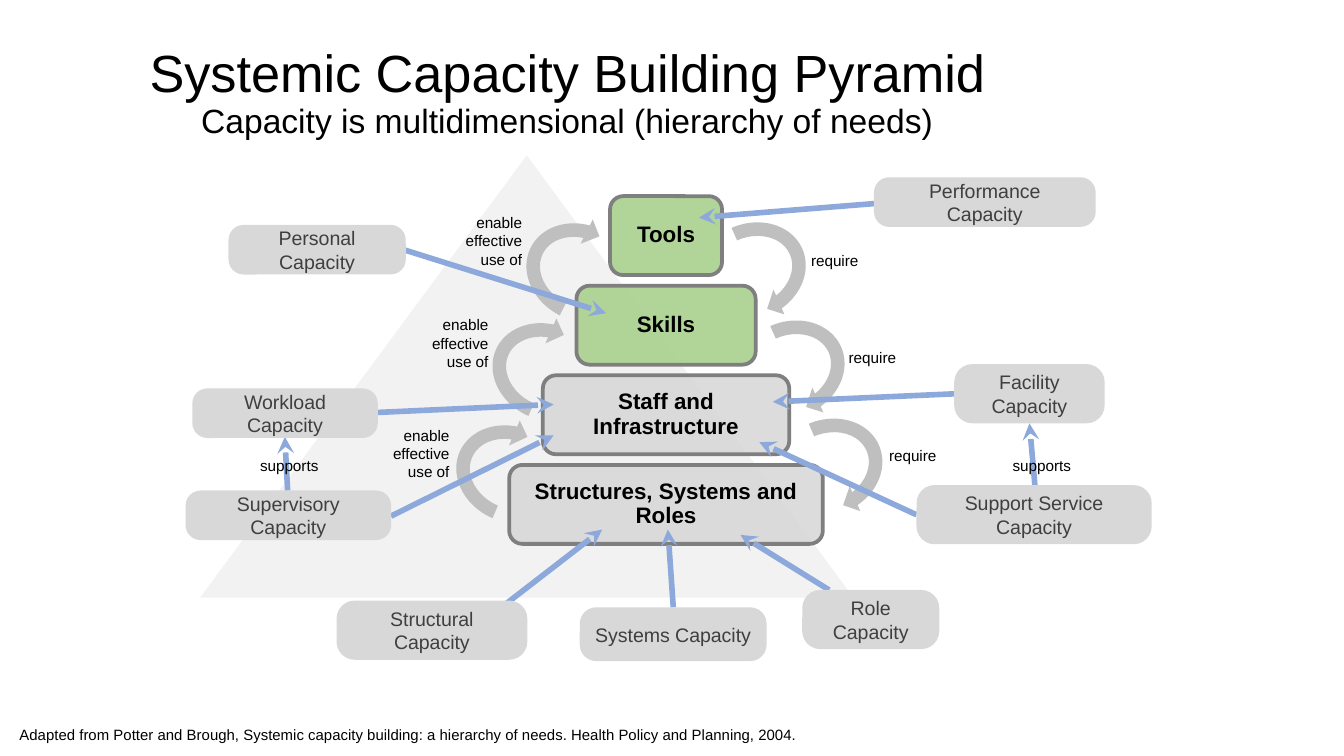
from lxml.etree import SubElement
from pptx import Presentation
from pptx.dml.color import RGBColor
from pptx.enum.shapes import MSO_CONNECTOR as Connector, MSO_SHAPE as Shape
from pptx.enum.text import MSO_ANCHOR as Anchor, PP_ALIGN as Align
from pptx.oxml.ns import qn
from pptx.util import Pt

INK = "000000"
SILVER = "D8D8D8"
GREEN = "A8D08C"

LEVELS = [
    ("Tools", GREEN),
    ("Skills", GREEN),
    ("Staff and Infrastructure", SILVER),
    ("Structures, Systems and Roles", SILVER),
]
LEVEL_CENTRE, LEVEL_TOP, LEVEL_STEP = 356.8, 105.1, 48
LEVEL_WIDTH, LEVEL_GROWTH, LEVEL_HEIGHT = 60, 36, 42.3

CYCLES = [
    (244.8, 220.3, 293.3),
    (264.2, 165.6, 293.7),
    (282.2, 112.3, 296.7),
    (414, 216.7, 67.2),
    (393.8, 164.2, 66.1),
    (373, 111.6, 66.3),
]
ENABLE_LABELS = [(198, 225.4), (218.9, 166.3), (236.9, 111.6)]
REQUIRE_LABELS = [(429.1, 131.8), (449.3, 183.6), (470.9, 236.2)]
SUPPORT_LABELS = [(133.9, 241.9), (537.1, 241.9)]

LINKS = [
    (481.7, 108, 374.4, 116.6),
    (207.4, 131, 324.7, 167.8),
    (511.2, 211, 414, 215.3),
    (491, 275.8, 406.8, 236.9),
    (554.4, 259.9, 551.5, 226.8),
    (201.6, 221, 296.6, 216.7),
    (209.5, 276.5, 296.6, 233.3),
    (154.1, 262.8, 152.6, 234),
    (268.6, 325.4, 322.6, 283.7),
    (360.7, 325.4, 357.8, 283.7),
    (444.2, 316.1, 396.7, 286.6),
]

CAPACITIES = [
    ("Personal Capacity", 122.4, 120.5, 95, 26.6),
    ("Workload Capacity", 103, 208.1, 99.4, 26.6),
    ("Supervisory Capacity", 99.4, 262.8, 110.2, 26.6),
    ("Structural Capacity", 180.3, 321.8, 102.2, 31.7),
    ("Performance Capacity", 468.2, 95, 118.8, 26.6),
    ("Facility Capacity", 511.2, 195.1, 80.6, 31.7),
    ("Support Service Capacity", 491, 259.9, 126, 31.7),
    ("Role Capacity", 429.8, 316.1, 73.4, 31.7),
    ("Systems Capacity", 310.6, 325.4, 100.1, 28.8),
]


def colour(code):
    return RGBColor.from_string(code)


class Painter:
    font = "Arial"
    link_colour = "8DA9DB"

    def __init__(self, page):
        self.page = page

    def style(self, para, text, size, ink=INK, align=Align.LEFT, bold=False, spacing=None):
        para.text = text
        para.alignment = align
        para.line_spacing = spacing
        para.font.name = self.font
        para.font.size = Pt(size)
        para.font.bold = bold
        para.font.color.rgb = colour(ink)

    def frame(self, shape, side=5.4, edge=2.7, anchor=Anchor.TOP):
        frame = shape.text_frame
        frame.word_wrap = True
        frame.margin_left = frame.margin_right = Pt(side)
        frame.margin_top = frame.margin_bottom = Pt(edge)
        frame.vertical_anchor = anchor
        return frame

    def shape(self, kind, left, top, width, height, fill, line=None, opacity=None):
        shape = self.page.shapes.add_shape(kind, Pt(left), Pt(top), Pt(width), Pt(height))
        shape.shadow.inherit = False
        shape.fill.solid()
        shape.fill.fore_color.rgb = colour(fill)
        if line:
            shape.line.color.rgb = colour(line)
            shape.line.width = Pt(2)
        else:
            shape.line.fill.background()
        if opacity:
            tint = shape._element.spPr.find(qn("a:solidFill"))[0]
            SubElement(tint, qn("a:alpha")).set("val", str(opacity * 1000))
        return shape

    def level(self, text, fill, left, top, width, height):
        box = self.shape(Shape.ROUNDED_RECTANGLE, left, top, width, height, fill, "7F7F7F", 89)
        para = self.frame(box, 3.6, 3.6, Anchor.MIDDLE).paragraphs[0]
        self.style(para, text, 12, align=Align.CENTER, bold=True, spacing=0.9)

    def capacity(self, text, left, top, width, height):
        box = self.shape(Shape.ROUNDED_RECTANGLE, left, top, width, height, SILVER)
        box.adjustments[0] = 0.305
        para = self.frame(box, anchor=Anchor.MIDDLE).paragraphs[0]
        self.style(para, text, 10.5, "3F3F3F", Align.CENTER)

    def cycle(self, left, top, angle):
        self.shape(Shape.CIRCULAR_ARROW, left, top, 58.3, 67.7, "BFBFBF").rotation = angle

    def label(self, text, left, top, width, height, size=8.2, align=Align.LEFT):
        box = self.page.shapes.add_textbox(Pt(left), Pt(top), Pt(width), Pt(height))
        self.style(self.frame(box).paragraphs[0], text, size, align=align)

    def link(self, *ends):
        link = self.page.shapes.add_connector(Connector.STRAIGHT, *map(Pt, ends))
        link.line.color.rgb = colour(self.link_colour)
        link.line.width = Pt(3)
        SubElement(link.line._get_or_add_ln(), qn("a:tailEnd")).set("type", "stealth")
        SubElement(link._element.spPr, qn("a:effectLst"))

    def title(self, heading, subtitle):
        box = self.page.shapes.add_textbox(Pt(13.7), Pt(4.3), Pt(595.4), Pt(92.2))
        frame = self.frame(box, anchor=Anchor.MIDDLE)
        first = frame.paragraphs[0]
        first._p.get_or_add_pPr().set("marR", str(Pt(15)))
        self.style(first, heading, 28, align=Align.CENTER, spacing=0.9)
        self.style(frame.add_paragraph(), subtitle, 18, align=Align.CENTER, spacing=0.9)


def main():
    deck = Presentation()
    deck.slide_width, deck.slide_height = Pt(720), Pt(405)
    painter = Painter(deck.slides.add_slide(deck.slide_layouts[6]))

    painter.shape(Shape.ISOSCELES_TRIANGLE, 105.1, 81.4, 354.2, 239.8, "F2F2F2", "FFFFFF")
    for index, (text, fill) in enumerate(LEVELS):
        width = LEVEL_WIDTH + LEVEL_GROWTH * index
        top = LEVEL_TOP + LEVEL_STEP * index
        painter.level(text, fill, LEVEL_CENTRE - width / 2, top, width, LEVEL_HEIGHT)
    for cycle in CYCLES:
        painter.cycle(*cycle)
    for left, top in ENABLE_LABELS:
        painter.label("enable effective use of", left, top, 48.2, 35.3, align=Align.RIGHT)
    for left, top in REQUIRE_LABELS:
        painter.label("require", left, top, 43.2, 15.1)
    for link in LINKS:
        painter.link(*link)
    for left, top in SUPPORT_LABELS:
        painter.label("supports", left, top, 43.2, 15.1)
    for capacity in CAPACITIES:
        painter.capacity(*capacity)
    painter.title(
        "Systemic Capacity Building Pyramid",
        "Capacity is multidimensional (hierarchy of needs)",
    )
    painter.label(
        "Adapted from Potter and Brough, Systemic capacity building: a hierarchy of needs. "
        "Health Policy and Planning, 2004.",
        5, 385.9, 526.3, 15.1, size=8,
    )
    deck.save("out.pptx")


if __name__ == "__main__":
    main()
